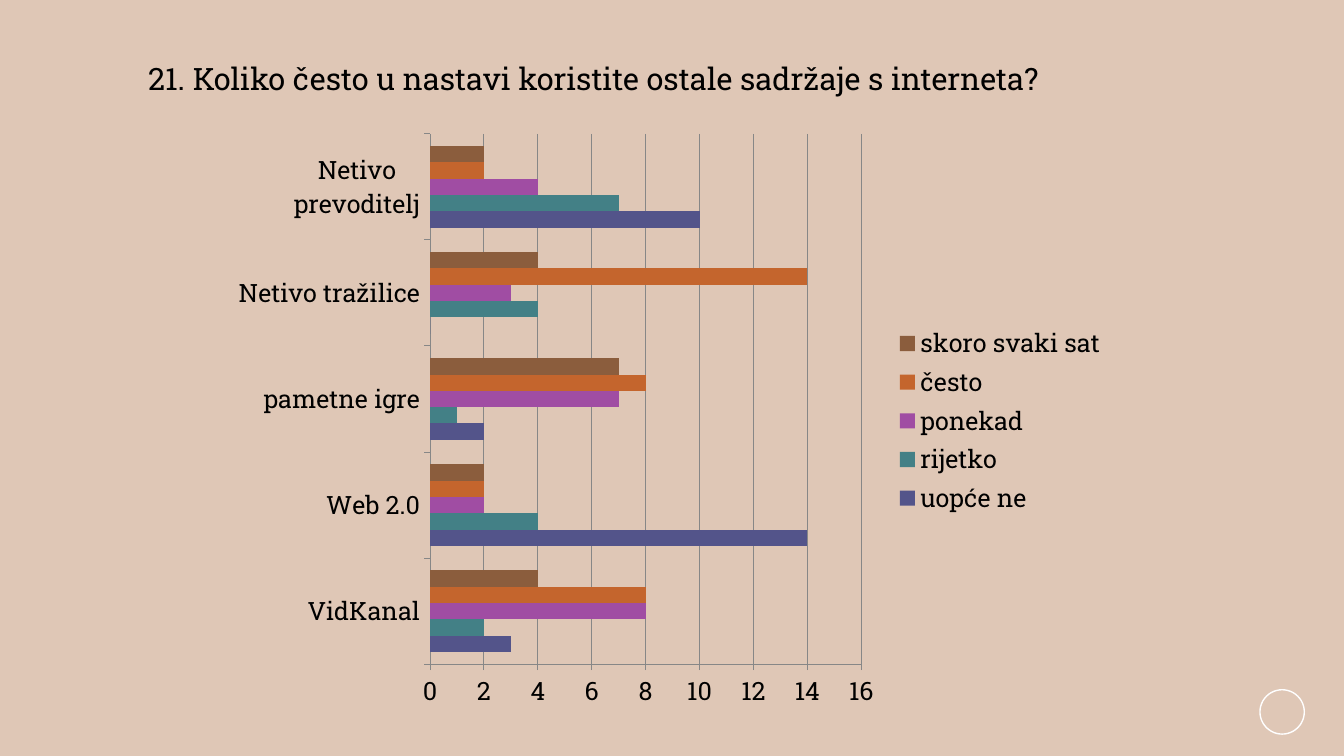
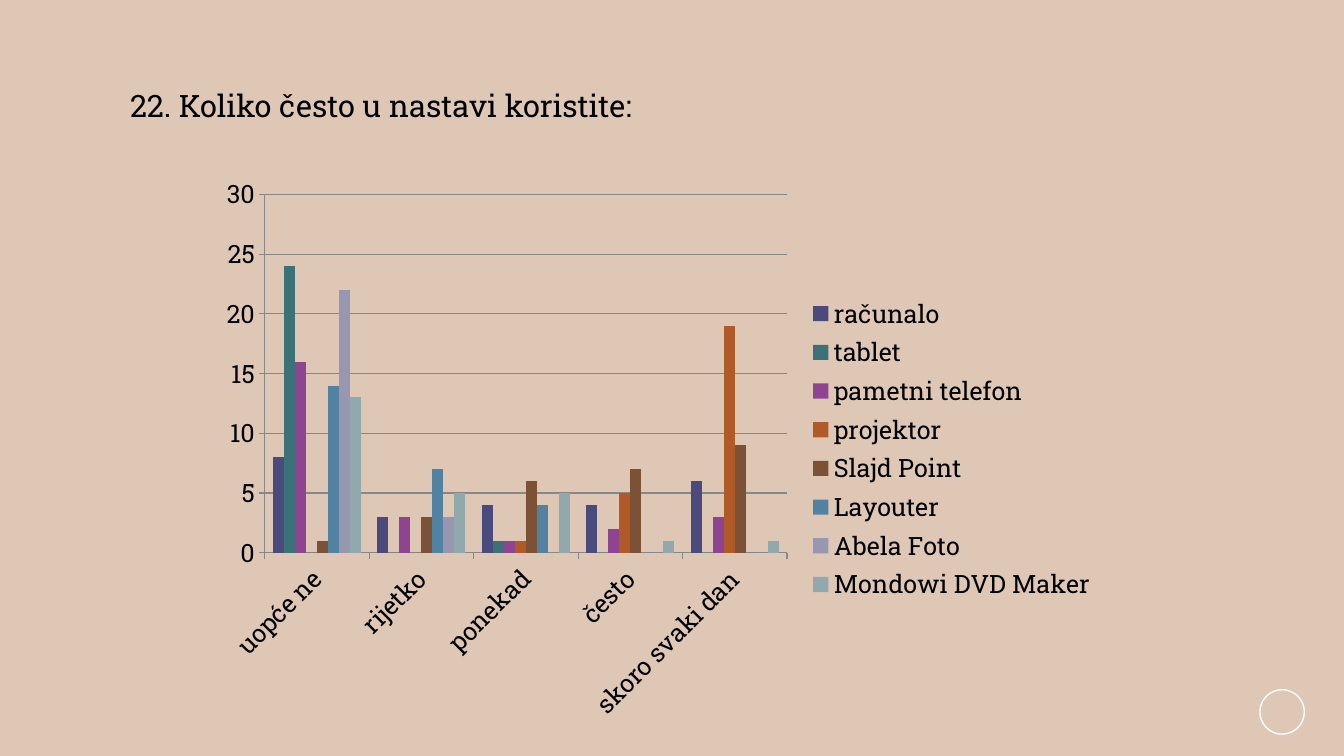
"""Build two survey slides, each with a question and a clustered bar or column chart."""
from pptx import Presentation
from pptx.chart.data import CategoryChartData
from pptx.dml.color import RGBColor
from pptx.enum.chart import XL_CHART_TYPE, XL_LEGEND_POSITION, XL_TICK_MARK
from pptx.enum.shapes import MSO_SHAPE
from pptx.enum.text import MSO_ANCHOR, PP_ALIGN
from pptx.util import Pt

BAR = XL_CHART_TYPE.BAR_CLUSTERED
COLUMN = XL_CHART_TYPE.COLUMN_CLUSTERED
LEGEND_RIGHT = XL_LEGEND_POSITION.RIGHT
TICK_OUTSIDE = XL_TICK_MARK.OUTSIDE
OVAL = MSO_SHAPE.OVAL
TOP = MSO_ANCHOR.TOP
LEFT = PP_ALIGN.LEFT

FONT = "Roboto Slab"
COLORS = {
    "background": "DFC7B6",
    "text": "000000",
    "ring": "FFFFFF",
    "grid": "878787",
    "indigo": "53548A",
    "teal": "438086",
    "purple": "A04DA3",
    "orange": "C4652D",
    "brown": "8B5D3D",
    "dark indigo": "4A4B7C",
    "dark teal": "3B7277",
    "dark purple": "8F4492",
    "dark orange": "AF5A27",
    "dark brown": "7B5236",
    "blue": "5282A2",
    "pale indigo": "9797B0",
    "pale teal": "91A9AC",
}

SLIDES = [
    {
        "title": "21. Koliko često u nastavi koristite ostale sadržaje s interneta?",
        "title_box": (98.6, 39.2, 716.4, 33.8),
        "chart_type": BAR,
        "chart_box": (157.7, 87.1, 640, 427),
        "maximum": 16,
        "unit": 2,
        "label_rotation": 0,
        "categories": ["VidKanal", "Web 2.0", "pametne igre", "Netivo tražilice", "Netivo prevoditelj"],
        "series": [
            ("uopće ne", (3, 14, 2, 0, 10), "indigo"),
            ("rijetko", (2, 4, 1, 4, 7), "teal"),
            ("ponekad", (8, 2, 7, 3, 4), "purple"),
            ("često", (8, 2, 8, 14, 2), "orange"),
            ("skoro svaki sat", (4, 2, 7, 4, 2), "brown"),
        ],
    },
    {
        "title": "22. Koliko često u nastavi koristite:",
        "title_box": (85.7, 58.3, 788.4, 33.8),
        "chart_type": COLUMN,
        "chart_box": (149, 118.8, 641.5, 404),
        "maximum": 30,
        "unit": 5,
        "label_rotation": -45,
        "categories": ["uopće ne", "rijetko", "ponekad", "često", "skoro svaki dan"],
        "series": [
            ("računalo", (8, 3, 4, 4, 6), "dark indigo"),
            ("tablet", (24, 0, 1, 0, 0), "dark teal"),
            ("pametni telefon", (16, 3, 1, 2, 3), "dark purple"),
            ("projektor", (0, 0, 1, 5, 19), "dark orange"),
            ("Slajd Point", (1, 3, 6, 7, 9), "dark brown"),
            ("Layouter", (14, 7, 4, 0, 0), "blue"),
            ("Abela Foto", (22, 3, 0, 0, 0), "pale indigo"),
            ("Mondowi DVD Maker", (13, 5, 5, 1, 1), "pale teal"),
        ],
    },
]


def color(name):
    return RGBColor.from_string(COLORS[name])


def style_font(font, size):
    font.name = FONT
    font.size = Pt(size)
    font.bold = False
    font.color.rgb = color("text")


presentation = Presentation()
presentation.slide_width = Pt(960)
presentation.slide_height = Pt(540)
background = presentation.slide_master.background.fill
background.solid()
background.fore_color.rgb = color("background")

for content in SLIDES:
    slide = presentation.slides.add_slide(presentation.slide_layouts[5])

    ring = slide.shapes.add_shape(OVAL, Pt(900), Pt(492.7), Pt(31.7), Pt(31.7))
    ring.shadow.inherit = False
    ring.fill.background()
    ring.line.color.rgb = color("ring")
    ring.line.width = Pt(1)

    title = slide.shapes.title
    title.left, title.top, title.width, title.height = map(Pt, content["title_box"])
    title.text_frame.vertical_anchor = TOP
    title.text_frame.word_wrap = True
    paragraph = title.text_frame.paragraphs[0]
    paragraph.alignment = LEFT
    run = paragraph.add_run()
    run.text = content["title"]
    style_font(run.font, 22)

    chart_data = CategoryChartData()
    chart_data.categories = content["categories"]
    for name, values, _ in content["series"]:
        chart_data.add_series(name, values)
    chart = slide.shapes.add_chart(
        content["chart_type"], *map(Pt, content["chart_box"]), chart_data
    ).chart
    chart.has_title = False
    style_font(chart.font, 18)
    chart.has_legend = True
    chart.legend.position = LEGEND_RIGHT
    chart.legend.include_in_layout = False
    style_font(chart.legend.font, 18)

    plot = chart.plots[0]
    plot.gap_width = 150
    plot.overlap = 0
    plot.vary_by_categories = False
    for series, (_, _, fill_name) in zip(plot.series, content["series"]):
        series.format.fill.solid()
        series.format.fill.fore_color.rgb = color(fill_name)

    for axis in (chart.category_axis, chart.value_axis):
        axis.major_tick_mark = TICK_OUTSIDE
        axis.format.line.color.rgb = color("grid")
        axis.format.line.width = Pt(0.75)
        style_font(axis.tick_labels.font, 18)
    chart.value_axis.minimum_scale = 0
    chart.value_axis.maximum_scale = content["maximum"]
    chart.value_axis.major_unit = content["unit"]
    chart.value_axis.has_major_gridlines = True
    gridlines = chart.value_axis.major_gridlines.format.line
    gridlines.color.rgb = color("grid")
    gridlines.width = Pt(0.75)
    if content["label_rotation"]:
        label_body = chart.element.xpath(".//c:catAx/c:txPr/a:bodyPr")[0]
        label_body.set("rot", str(content["label_rotation"] * 60000))

presentation.save("out.pptx")
